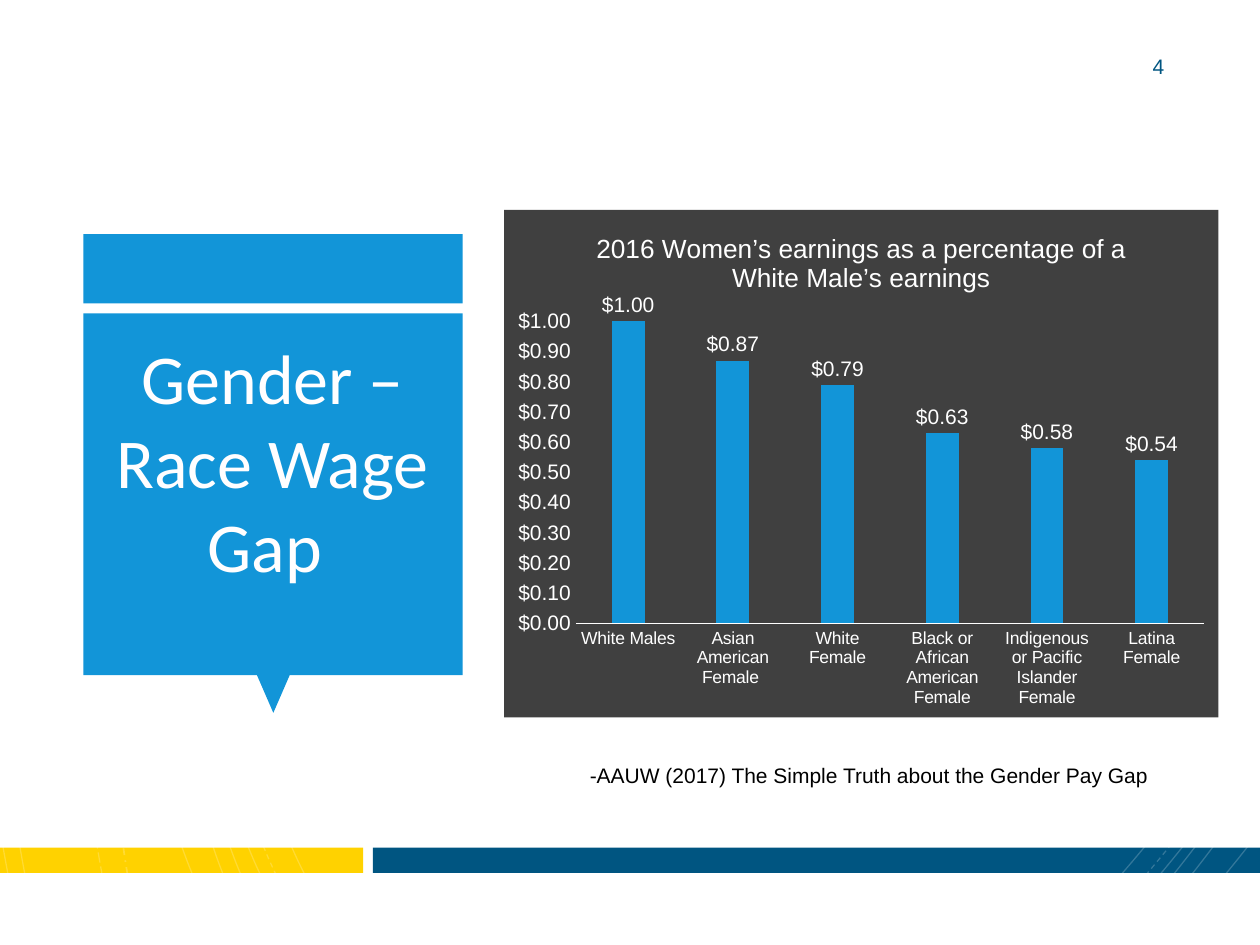
from lxml.etree import SubElement
from pptx import Presentation
from pptx.chart.data import CategoryChartData
from pptx.dml.color import RGBColor
from pptx.enum.chart import XL_CHART_TYPE, XL_LABEL_POSITION, XL_TICK_MARK
from pptx.enum.dml import MSO_LINE
from pptx.enum.shapes import MSO_SHAPE
from pptx.enum.text import MSO_ANCHOR, PP_ALIGN
from pptx.oxml import parse_xml
from pptx.oxml.ns import nsdecls, qn
from pptx.util import Cm, Pt

WHITE = RGBColor(0xFF, 0xFF, 0xFF)
TITLE_WHITE = RGBColor(0xFF, 0xFE, 0xFF)
BLACK = RGBColor(0, 0, 0)
NAVY = RGBColor(0x00, 0x55, 0x81)
YELLOW = RGBColor(0xFF, 0xD2, 0x00)
BLUE = RGBColor(0x12, 0x95, 0xD8)

# Content
TITLE = "Gender – Race Wage Gap "
NUMBER = "4"
SOURCE = "-AAUW (2017) The Simple Truth about the Gender Pay Gap"
CHART_TITLE = "2016 Women’s earnings as a percentage of a White Male’s earnings"
EARNINGS = [
    ("White Males", 1),
    ("Asian American Female ", 0.87),
    ("White Female", 0.79),
    ("Black or African American Female", 0.63),
    ("Indigenous or Pacific Islander Female", 0.58),
    ("Latina Female", 0.54),
]
DOLLARS = '"$"#,##0.00'

# Lengths in cm: left, top, width, height
BANDS = [
    ((7.52, 17.09, 17.91, 0.51), NAVY),
    ((0, 17.09, 7.32, 0.51), YELLOW),
]
CALLOUT = [
    (MSO_SHAPE.RECTANGLE, (1.68, 4.72, 7.65, 1.4), 0),
    (MSO_SHAPE.ISOSCELES_TRIANGLE, (5.18, 13.61, 0.66, 0.76), 180),
    (MSO_SHAPE.RECTANGLE, (1.68, 6.32, 7.65, 7.29), 0),
]

# Arcs over the bands: top x, two control points, bottom x, dash
BOTTOM, RIGHT = 19, 25.35
LEFT_ARCS = [
    (10.77, (5.99, 2.92), (2.72, 13.72), 7.04, None),
    (9.98, (5.41, 3.18), (2.34, 13.64), 6.4, MSO_LINE.DASH),
    (9.63, (5.13, 3.23), (2.08, 13.64), 6.07, None),
    (8.84, (4.65, 3.38), (2.08, 13.74), 5.59, None),
    (8.59, (4.39, 3.51), (1.85, 13.54), 5.18, None),
    (8.13, (4.14, 3.73), (1.02, 13.44), 4.6, None),
    (6.91, (3.35, 4.22), (1.24, 12.93), 2.87, MSO_LINE.DASH_DOT),
    (6.68, (3, 4.29), (0.53, 12.67), 2.39, MSO_LINE.LONG_DASH),
    (4.14, (0.2, 4.7), (-0.86, 12.45), 0.81, None),
]
# Bottom x, two control points, y at the right edge, dash
RIGHT_ARCS = [
    (21.34, (22.78, 17.53), (24.18, 15.8), 13.92, None),
    (21.87, (23.09, 17.73), (24.28, 16.26), 14.66, MSO_LINE.DASH),
    (22.17, (23.29, 17.81), (24.38, 16.46), 15.01, None),
    (22.5, (23.5, 17.88), (24.46, 16.64), 15.32, None),
    (22.89, (23.75, 18.01), (24.59, 16.94), 15.82, None),
    (23.52, (24.13, 18.31), (24.77, 17.58), 16.81, None),
]
ARCS = [((x, 0), a, b, (end, BOTTOM), dash) for x, a, b, end, dash in LEFT_ARCS]
ARCS += [((x, BOTTOM), a, b, (RIGHT, y), dash) for x, a, b, y, dash in RIGHT_ARCS]
ARCS.append(((0, 16.71), (0.13, 17.5), (0.28, 18.26), (0.46, BOTTOM), None))


def format_font(font, size, color=WHITE, name="Arial"):
    font.size, font.name, font.bold = Pt(size), name, False
    font.color.rgb = color


def set_text(tf, text, size, color, name="Arial", align=PP_ALIGN.LEFT,
             anchor=MSO_ANCHOR.TOP):
    tf.word_wrap = True
    tf.vertical_anchor = anchor
    p = tf.paragraphs[0]
    p.alignment = align
    r = p.add_run()
    r.text = text
    format_font(r.font, size, color, name)


def add_filled(s, kind, box, color, rotation=0):
    sp = s.shapes.add_shape(kind, *map(Cm, box))
    sp.shadow.inherit = False
    sp.fill.solid()
    sp.fill.fore_color.rgb = color
    sp.line.fill.background()
    sp.rotation = rotation


def add_arc(s, *points, dash):
    start, *rest = [tuple(map(Cm, point)) for point in points]
    builder = s.shapes.build_freeform(*start)
    builder.add_line_segments(rest, close=False)
    sp = builder.convert_to_shape()
    sp.shadow.inherit = False
    sp.fill.background()
    sp.line.color.rgb = WHITE
    sp.line.width = Pt(1 if dash == MSO_LINE.DASH_DOT else 0.75)
    if dash:
        sp.line.dash_style = dash

    # Join the three segments into one Bezier curve
    outline = sp.element.find(".//" + qn("a:path"))
    segments = outline.findall(qn("a:lnTo"))
    curve = SubElement(outline, qn("a:cubicBezTo"))
    for segment in segments:
        curve.append(segment[0])
        outline.remove(segment)

    color = sp.element.find(".//" + qn("a:ln")).find(".//" + qn("a:srgbClr"))
    SubElement(color, qn("a:alpha"), val="20000")


def add_earnings_chart(s):
    data = CategoryChartData(number_format=DOLLARS)
    data.categories = [name for name, _ in EARNINGS]
    data.add_series("Series 1", [value for _, value in EARNINGS])
    box = map(Cm, (10.16, 4.23, 14.4, 10.23))
    chart = s.shapes.add_chart(XL_CHART_TYPE.COLUMN_CLUSTERED, *box, data).chart
    format_font(chart.font, 10)
    chart.has_legend = False
    chart.has_title = True
    chart.chart_title.include_in_layout = False
    r = chart.chart_title.text_frame.paragraphs[0].add_run()
    r.text = CHART_TITLE
    format_font(r.font, 15)

    # Axes
    cat, val = chart.category_axis, chart.value_axis
    for axis, size in ((cat, 10), (val, 12)):
        axis.major_tick_mark = axis.minor_tick_mark = XL_TICK_MARK.NONE
        axis.has_major_gridlines = False
        format_font(axis.tick_labels.font, size)
    cat.format.line.color.rgb = WHITE
    cat.format.line.width = Pt(0.75)
    val.format.line.fill.background()
    val.minimum_scale, val.maximum_scale, val.major_unit = 0, 1, 0.1
    val.tick_labels.number_format = DOLLARS
    val.tick_labels.number_format_is_linked = False

    # Columns and their labels
    plot = chart.plots[0]
    plot.gap_width, plot.overlap = 219, -27
    plot.vary_by_categories = False
    fill = plot.series[0].format.fill
    fill.solid()
    fill.fore_color.rgb = BLUE
    plot.has_data_labels = True
    labels = plot.data_labels
    labels.show_value = True
    labels.number_format, labels.number_format_is_linked = DOLLARS, False
    labels.position = XL_LABEL_POSITION.OUTSIDE_END
    format_font(labels.font, 12)

    # Dark background
    chart.element.find(qn("c:chart")).addnext(parse_xml(
        f'<c:spPr {nsdecls("c", "a")}><a:solidFill><a:srgbClr val="404040"/>'
        '</a:solidFill><a:ln><a:noFill/></a:ln></c:spPr>'))


def main():
    prs = Presentation()
    prs.slide_width, prs.slide_height = Cm(25.4), Cm(19.05)
    s = prs.slides.add_slide(prs.slide_layouts[5])

    # Footer bands with arcs
    for box, color in BANDS:
        add_filled(s, MSO_SHAPE.RECTANGLE, box, color)
    for *points, dash in ARCS:
        add_arc(s, *points, dash=dash)

    # Title callout
    for kind, box, rotation in CALLOUT:
        add_filled(s, kind, box, BLUE, rotation)
    title = s.shapes.title
    title.left, title.top, title.width, title.height = map(Cm, (1.85, 6.5, 7.29, 6.86))
    tf = title.text_frame
    tf.margin_left = tf.margin_right = tf.margin_top = tf.margin_bottom = Cm(0.25)
    set_text(tf, TITLE, 40, TITLE_WHITE, name="Calibri", align=PP_ALIGN.CENTER)
    title.element.getparent().append(title.element)

    # Slide number, chart and source
    number = s.shapes.add_textbox(*map(Cm, (21.82, 0.89, 1.9, 0.89)))
    set_text(number.text_frame, NUMBER, 12, NAVY, align=PP_ALIGN.RIGHT,
             anchor=MSO_ANCHOR.MIDDLE)
    add_earnings_chart(s)
    source = s.shapes.add_textbox(*map(Cm, (11.64, 15.24, 12.7, 0.76)))
    set_text(source.text_frame, SOURCE, 12, BLACK)

    prs.save("out.pptx")


if __name__ == "__main__":
    main()
